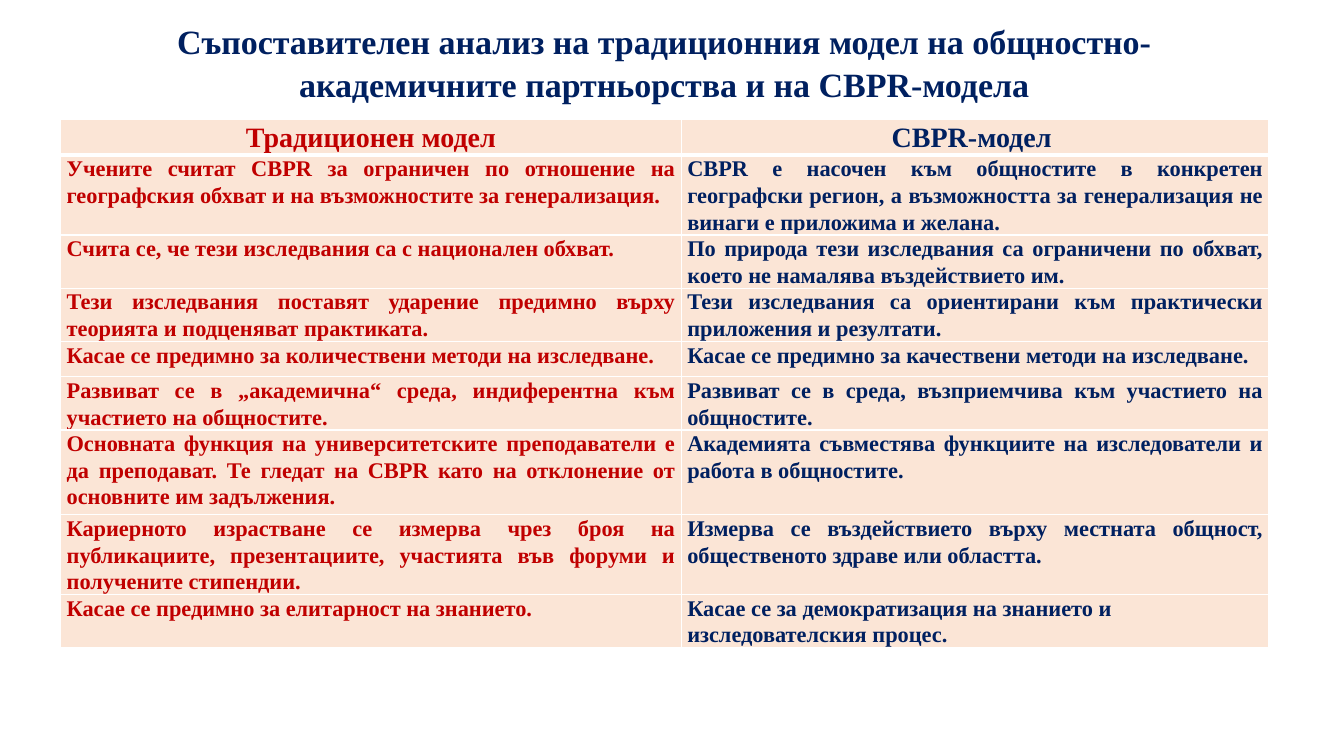
from pptx import Presentation
from pptx.dml.color import RGBColor
from pptx.enum.text import MSO_ANCHOR, MSO_AUTO_SIZE, PP_ALIGN
from pptx.oxml import parse_xml
from pptx.oxml.ns import nsdecls
from pptx.util import Cm, Pt

NAVY = RGBColor(0x00, 0x20, 0x60)
RED = RGBColor(0xC0, 0x00, 0x00)
PEACH = RGBColor(0xFB, 0xE5, 0xD6)
WHITE = RGBColor(0xFF, 0xFF, 0xFF)
FONT = "Times New Roman"

TITLE = ("Съпоставителен анализ на традиционния модел на общностно-"
         "академичните партньорства и на CBPR-модела")

# Row height in centimetres, traditional model, CBPR model
ROWS = [
    (0.89, "Традиционен модел", "CBPR-модел "),
    (2.01,
     "Учените считат CBPR за ограничен по отношение на географския обхват "
     "и на възможностите за генерализация.",
     "CBPR е насочен към общностите в конкретен географски регион, "
     "а възможността за генерализация не винаги е приложима и желана."),
    (1.34,
     "Счита се, че тези изследвания са с национален обхват.",
     "По природа тези изследвания са ограничени по обхват, "
     "което не намалява въздействието им."),
    (1.34,
     "Тези изследвания поставят ударение предимно върху теорията "
     "и подценяват практиката.",
     "Тези изследвания са ориентирани към практически приложения и резултати."),
    (0.89,
     "Касае се предимно за количествени методи на изследване.",
     "Касае се предимно за качествени методи на изследване."),
    (1.34,
     "Развиват се в „академична“ среда, индиферентна към участието "
     "на общностите.",
     "Развиват се в среда, възприемчива към участието на общностите."),
    (2.14,
     "Основната функция на университетските преподаватели е да преподават. "
     "Те гледат на CBPR като на отклонение от основните им задължения.",
     "Академията съвместява функциите на изследователи и работа в общностите."),
    (2.01,
     "Кариерното израстване се измерва чрез броя на публикациите, "
     "презентациите, участията във форуми и получените стипендии.",
     "Измерва се въздействието върху местната общност, общественото здраве "
     "или областта."),
    (1.34,
     "Касае се предимно за елитарност на знанието.",
     "Касае се за демократизация на знанието и изследователския процес."),
]
COLUMN_WIDTHS = [Cm(15.64), Cm(14.81)]
COLUMN_COLORS = [RED, NAVY]


def add_styled_run(paragraph, text, size, color):
    run = paragraph.add_run()
    run.text = text
    run.font.name = FONT
    run.font.size = Pt(size)
    run.font.bold = True
    run.font.color.rgb = color


def set_borders(cell, widths):
    """Draw white borders; widths maps L, R, T and B to points."""
    properties = cell._tc.get_or_add_tcPr()
    for position, (side, width) in enumerate(widths.items()):
        properties.insert(position, parse_xml(
            f'<a:ln{side} {nsdecls("a")} w="{Pt(width)}"><a:solidFill>'
            f'<a:srgbClr val="{WHITE}"/></a:solidFill></a:ln{side}>'))


presentation = Presentation()
presentation.slide_width = Cm(33.87)
presentation.slide_height = Cm(19.05)
slide = presentation.slides.add_slide(presentation.slide_layouts[5])

title = slide.shapes.title
title.left, title.top = Cm(1.93), Cm(0.33)
title.width, title.height = Cm(29.62), Cm(2.44)
title_frame = title.text_frame
title_frame.word_wrap = True
title_frame.auto_size = MSO_AUTO_SIZE.NONE
title_frame.vertical_anchor = MSO_ANCHOR.MIDDLE
title_paragraph = title_frame.paragraphs[0]
title_paragraph.alignment = PP_ALIGN.CENTER
title_paragraph.line_spacing = 1.05
add_styled_run(title_paragraph, TITLE, 24.3, NAVY)

table_height = Cm(sum(row[0] for row in ROWS))
table = slide.shapes.add_table(len(ROWS), len(COLUMN_WIDTHS), Cm(1.53), Cm(3.02),
                               sum(COLUMN_WIDTHS), table_height).table
for column, width in zip(table.columns, COLUMN_WIDTHS):
    column.width = width

last_row = len(ROWS) - 1
for row_index, (height, *texts) in enumerate(ROWS):
    table.rows[row_index].height = Cm(height)
    is_header = row_index == 0
    if is_header:
        alignment = PP_ALIGN.CENTER
    elif row_index == last_row:
        alignment = PP_ALIGN.LEFT
    else:
        alignment = PP_ALIGN.JUSTIFY
    for column_index, text in enumerate(texts):
        cell = table.cell(row_index, column_index)
        cell.margin_left = cell.margin_right = Cm(0.15)
        cell.margin_top = cell.margin_bottom = 0
        cell.fill.solid()
        cell.fill.fore_color.rgb = PEACH
        set_borders(cell, {"L": 1, "R": 1, "T": 3 if row_index == 1 else 1,
                           "B": 3 if is_header else 1})
        paragraph = cell.text_frame.paragraphs[0]
        paragraph.alignment = alignment
        paragraph.line_spacing = 1.07
        add_styled_run(paragraph, text, 20 if is_header else 16,
                       COLUMN_COLORS[column_index])

presentation.save("out.pptx")
